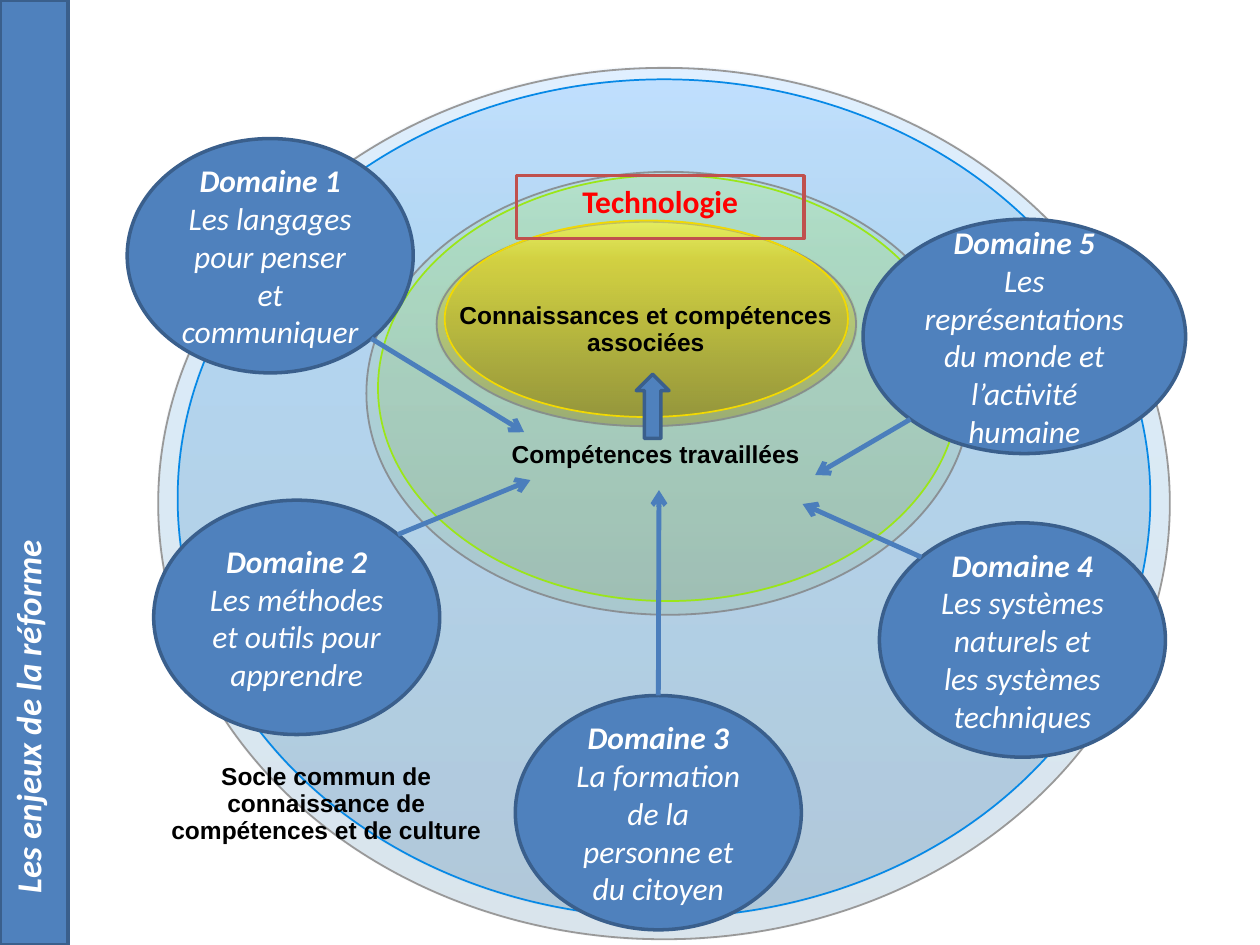
import pptx
import pptx.dml.color
import pptx.enum.shapes
import pptx.enum.text
import pptx.oxml
import pptx.oxml.ns
import pptx.util

SHAPE = pptx.enum.shapes.MSO_SHAPE
ALIGN = pptx.enum.text.PP_ALIGN
ANCHOR = pptx.enum.text.MSO_ANCHOR
NS = pptx.oxml.ns.nsdecls("a")
BLUE, NAVY = "4F81BD", "3A5F8C"

deck = pptx.Presentation()
deck.slide_width, deck.slide_height = pptx.util.Inches(10), pptx.util.Inches(7.5)
slide = deck.slides.add_slide(deck.slide_layouts[5])
shapes = slide.shapes

# Grid of 100 columns by 75 rows
col, row = deck.slide_width / 100, deck.slide_height / 75


def paint(shape, line, weight=2, fill=None):
    shape.line.color.rgb = pptx.dml.color.RGBColor.from_string(line)
    shape.line.width = pptx.util.Pt(weight)
    if fill:
        shape.fill.solid()
        shape.fill.fore_color.rgb = pptx.dml.color.RGBColor.from_string(fill)


def write(shape, text, size=18, font="Calibri", color="FFFFFF", bold=True, italic=False,
          align=ALIGN.CENTER, anchor=ANCHOR.TOP, spacing=None, after=0):
    frame = shape.text_frame
    frame.word_wrap = True
    frame.vertical_anchor = anchor
    paragraph = frame.add_paragraph() if frame.text else frame.paragraphs[0]
    paragraph.alignment = align
    paragraph.line_spacing = spacing
    paragraph.space_after = pptx.util.Pt(after)
    run = paragraph.add_run()
    run.text = text
    run.font.size, run.font.name = pptx.util.Pt(size), font
    run.font.bold, run.font.italic = bold, italic
    run.font.color.rgb = pptx.dml.color.RGBColor.from_string(color)
    return paragraph


# Title band, turned about its centre to read from bottom to top
reform = shapes.title
reform.width, reform.height = deck.slide_height, int(5.4 * col)
reform.left = (reform.height - reform.width) // 2
reform.top = (deck.slide_height - reform.height) // 2
reform.rotation = 270
paint(reform, NAVY, fill=BLUE)
title = write(reform, "Les enjeux de la réforme", size=20, italic=True, align=ALIGN.LEFT)
title._p.get_or_add_pPr().set("marL", str(pptx.util.Inches(0.31)))
reform.text_frame.auto_size = pptx.enum.text.MSO_AUTO_SIZE.NONE

# Nested rings: place, line, opacity, gradient colours, caption and its place
rings = [
    ((14.1, 6.3, 77.2, 66.5), "0789E6", 18, ("3799FF", "0C84DC", "044F86"),
     "Socle commun de connaissance de compétences et de culture", (10.9, 60.1, 30, 4.8)),
    ((30, 13.9, 46.1, 33.8), "9BE618", 13, ("AEFF3B", "96DC1C", "5A860D"),
     "Compétences travaillées", (27.5, 34.6, 49.1, 5)),
    ((35.3, 17.5, 32, 15.6), "F2D902", 48, ("FFF834", "E7CF07", "8D7E02"),
     "Connaissances et compétences associées", (33.7, 23.5, 35.1, 7.9)),
]
for (x, y, w, h), edge, opacity, colors, caption, (cx, cy, cw, ch) in rings:
    ring = shapes.add_shape(SHAPE.OVAL, int(x * col), int(y * row), int(w * col), int(h * row))
    paint(ring, edge, 1)
    stops = "".join(
        f'<a:gs pos="{share * 1000}"><a:srgbClr val="{color}">'
        f'<a:alpha val="{opacity * 1000}"/></a:srgbClr></a:gs>'
        for share, color in zip((0, 20, 100), colors))
    ring._element.spPr.find(pptx.oxml.ns.qn("a:prstGeom")).addnext(pptx.oxml.parse_xml(
        f'<a:gradFill {NS} rotWithShape="1"><a:gsLst>{stops}</a:gsLst>'
        '<a:lin ang="5400000" scaled="0"/></a:gradFill>'))
    # Slightly larger grey shadow, which shows as a rim
    ring._element.spPr.append(pptx.oxml.parse_xml(
        f'<a:effectLst {NS}><a:outerShdw dist="38100" dir="5400000" sx="104000" sy="104000" '
        'algn="ctr" rotWithShape="0"><a:srgbClr val="808080"><a:alpha val="80000"/>'
        '</a:srgbClr></a:outerShdw></a:effectLst>'))
    label = shapes.add_textbox(int(cx * col), int(cy * row), int(cw * col), int(ch * row))
    write(label, caption, size=14, font="Arial", color="000000", spacing=0.93, after=5)

# Subject in its frame
subject = shapes.add_shape(SHAPE.RECTANGLE, int(41 * col), int(13.95 * row),
                           int(22.8 * col), int(5 * row))
subject.shadow.inherit = False
subject.fill.background()
paint(subject, "C0504D")
write(subject, "Technologie", color="FF0000")

# Domains: number, text, left, top, width, side the arrow leaves from, arrow tip
domains = [
    (1, "Les langages pour penser et communiquer", 10.1, 11, 22.7, (1, 1), (41.6, 34.3)),
    (2, "Les méthodes et outils pour apprendre", 12.2, 39.7, 22.7, (1, -1), (42.1, 38.1)),
    (5, "Les représentations du monde et l’activité humaine", 68.5, 17.4, 25.6, (-1, 1),
     (64.7, 37.7)),
    (4, "Les systèmes naturels et les systèmes techniques", 69.8, 41.5, 22.7, (-1, -1),
     (63.7, 40)),
    (3, "La formation de la personne et du citoyen", 40.9, 55.2, 22.7, (0, -1), (52.3, 38.9)),
]
domain_height = 18.6
diagonal = 0.5 ** 0.5
for number, text, x, y, w, (side_x, side_y), (tip_x, tip_y) in domains:
    domain = shapes.add_shape(SHAPE.OVAL, int(x * col), int(y * row),
                              int(w * col), int(domain_height * row))
    domain.shadow.inherit = False
    paint(domain, NAVY, fill=BLUE)
    write(domain, f"Domaine {number}", italic=True, anchor=ANCHOR.MIDDLE)
    write(domain, text, bold=False, italic=True, anchor=ANCHOR.MIDDLE)

    # The arrow leaves the oval on its diagonal, or at the middle of its top
    start_x = x + w / 2 * (1 + side_x * diagonal)
    start_y = y + domain_height / 2 * (1 + side_y * diagonal)
    arrow = shapes.add_connector(pptx.enum.shapes.MSO_CONNECTOR.STRAIGHT,
                                 int(start_x * col), int(start_y * row),
                                 int(tip_x * col), int(tip_y * row))
    if side_x == 0:
        arrow.begin_connect(domain, 0)
    paint(arrow, "4B7EBC", 2.75)
    arrow.line._get_or_add_ln().append(
        pptx.oxml.parse_xml(f'<a:tailEnd {NS} type="arrow"/>'))
    arrow._element.spPr.append(pptx.oxml.parse_xml(f"<a:effectLst {NS}/>"))

# From the skills worked on to the related knowledge
upward = shapes.add_shape(SHAPE.UP_ARROW, int(50.5 * col), int(29.7 * row),
                          int(2.6 * col), int(5.1 * row))
upward.shadow.inherit = False
paint(upward, NAVY, fill=BLUE)

deck.save("out.pptx")
